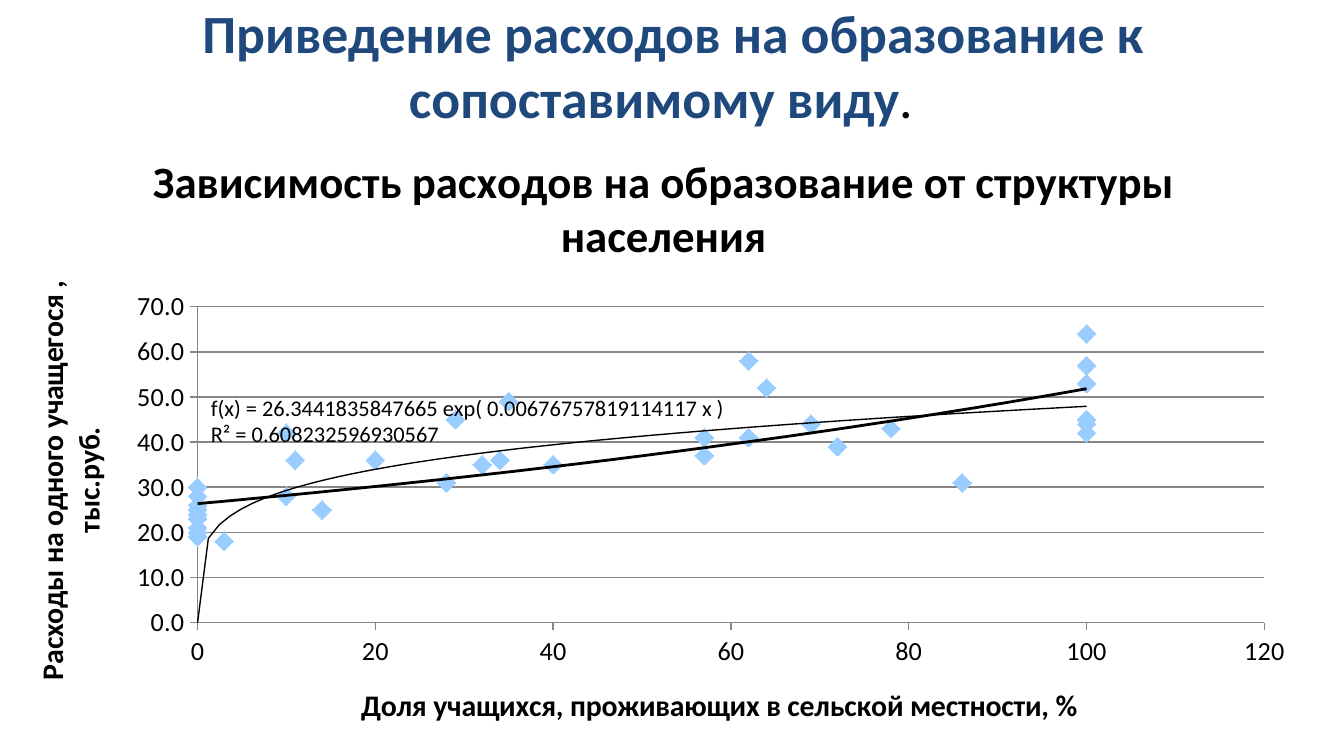
from dataclasses import dataclass

from lxml import etree
from pptx import Presentation
from pptx.chart.data import XyChartData
from pptx.dml.color import RGBColor
from pptx.enum.chart import XL_CHART_TYPE as ChartType
from pptx.enum.chart import XL_MARKER_STYLE as MarkerStyle
from pptx.enum.chart import XL_TICK_MARK as TickMark
from pptx.enum.text import MSO_ANCHOR as Anchor
from pptx.enum.text import PP_ALIGN as Align
from pptx.oxml import parse_xml
from pptx.oxml.ns import qn
from pptx.util import Inches, Pt


@dataclass(frozen=True)
class Theme:
    font: str = "Calibri"
    heading: str = "1F497D"
    text: str = "000000"
    marker: str = "99CCFF"
    grid: str = "868686"
    heading_size: float = 28.8
    chart_title_size: int = 24
    axis_title_size: int = 16
    tick_size: int = 14
    label_size: int = 12
    marker_size: int = 10


THEME = Theme()
CHART_NS = "http://schemas.openxmlformats.org/drawingml/2006/chart"
DRAWING_NS = "http://schemas.openxmlformats.org/drawingml/2006/main"

RURAL_SHARES = [
    100, 3, 57, 100, 10, 100, 0, 62, 57, 0, 100, 0, 86, 35, 64, 29, 72, 20, 32,
    100, 100, 0, 0, 10, 28, 0, 100, 0, 40, 0, 62, 11, 69, 0, 78, 34, 14,
]
SPENDINGS = [
    44, 18, 41, 57, 42, 42, 25, 41, 37, 30, 64, 19, 31, 49, 52, 45, 39, 36, 35,
    45, 45, 21, 24, 28, 31, 23, 53, 20, 35, 28, 58, 36, 44, 26, 43, 36, 25,
]


def color(value):
    return RGBColor.from_string(value)


def style_font(font, size, bold=False, shade=THEME.text):
    font.name = THEME.font
    font.size = Pt(size)
    font.bold = bold
    font.color.rgb = color(shade)


def add_heading(page, text, ending):
    box = page.shapes.add_textbox(Inches(0.51), Inches(0.01), Inches(9), Inches(0.94))
    frame = box.text_frame
    frame.word_wrap = True
    frame.vertical_anchor = Anchor.MIDDLE
    para = frame.paragraphs[0]
    para.alignment = Align.CENTER
    for words, bold, shade in ((text, True, THEME.heading), (ending, False, THEME.text)):
        span = para.add_run()
        span.text = words
        style_font(span.font, THEME.heading_size, bold, shade)


def make_layout(left, top, width=None, height=None):
    layout = etree.Element(qn("c:layout"))
    manual = etree.SubElement(layout, qn("c:manualLayout"))
    settings = [("xMode", "edge"), ("yMode", "edge"), ("x", left), ("y", top)]
    if width is not None:
        settings.insert(0, ("layoutTarget", "inner"))
        settings += [("w", width), ("h", height)]
    for name, value in settings:
        etree.SubElement(manual, qn(f"c:{name}")).set("val", str(value))
    return layout


def replace_layout(parent, layout, following):
    for old in parent.findall(qn("c:layout")):
        parent.remove(old)
    parent.find(qn(following)).addprevious(layout)


def set_title(title, text, size, left, top):
    para = title.text_frame.paragraphs[0]
    para.text = text
    style_font(para.font, size, True)
    replace_layout(title._element, make_layout(left, top), "c:overlay")


def style_axis(axis, maximum, step, number_format):
    axis.minimum_scale = 0
    axis.maximum_scale = maximum
    axis.major_unit = step
    axis.major_tick_mark = TickMark.OUTSIDE
    axis.minor_tick_mark = TickMark.NONE
    axis.tick_labels.number_format = number_format
    axis.tick_labels.number_format_is_linked = False
    style_font(axis.tick_labels.font, THEME.tick_size)
    axis.format.line.color.rgb = color(THEME.grid)


def add_trendline(series, kind, width, label_at=None):
    shown = int(label_at is not None)
    trendline = parse_xml(
        f'<c:trendline xmlns:c="{CHART_NS}" xmlns:a="{DRAWING_NS}">'
        f'<c:spPr><a:ln w="{Pt(width)}"><a:solidFill><a:srgbClr val="{THEME.text}"/>'
        f'</a:solidFill></a:ln></c:spPr><c:trendlineType val="{kind}"/>'
        f'<c:dispRSqr val="{shown}"/><c:dispEq val="{shown}"/></c:trendline>'
    )
    if label_at:
        label = etree.SubElement(trendline, qn("c:trendlineLbl"))
        label.append(make_layout(*label_at))
        etree.SubElement(label, qn("c:numFmt"), formatCode="General", sourceLinked="0")
        label.append(parse_xml(
            f'<c:txPr xmlns:c="{CHART_NS}" xmlns:a="{DRAWING_NS}"><a:bodyPr/><a:p><a:pPr>'
            f'<a:defRPr sz="{THEME.label_size * 100}"><a:solidFill>'
            f'<a:srgbClr val="{THEME.text}"/></a:solidFill>'
            f'<a:latin typeface="{THEME.font}"/></a:defRPr></a:pPr>'
            '<a:endParaRPr lang="ru-RU"/></a:p></c:txPr>'
        ))
    series._element.find(qn("c:xVal")).addprevious(trendline)


def add_spending_chart(page):
    data = XyChartData()
    points = data.add_series("Series 1")
    for share, spending in zip(RURAL_SHARES, SPENDINGS):
        points.add_data_point(share, spending)
    chart = page.shapes.add_chart(
        ChartType.XY_SCATTER, Inches(0), Inches(0.92), Inches(9.8), Inches(4.7), data
    ).chart
    chart.has_legend = False
    style_font(chart.font, THEME.label_size)
    chart.has_title = True
    set_title(chart.chart_title, "Зависимость расходов на образование от структуры населения",
              THEME.chart_title_size, 0.11, 0.03)

    shares, spendings = chart.category_axis, chart.value_axis
    style_axis(shares, 120, 20, "General")
    style_axis(spendings, 70, 10, "0.0")
    shares.has_major_gridlines = False
    spendings.has_major_gridlines = True
    spendings.major_gridlines.format.line.color.rgb = color(THEME.grid)
    set_title(shares.axis_title, "Доля учащихся, проживающих в сельской местности, %",
              THEME.axis_title_size, 0.27, 0.88)
    set_title(spendings.axis_title, "Расходы на одного учащегося , тыс.руб.",
              THEME.axis_title_size, 0.02, 0.24)

    plot = chart.plots[0]
    plot.vary_by_categories = False
    series = plot.series[0]
    series.format.line.fill.background()
    series.marker.style = MarkerStyle.DIAMOND
    series.marker.size = THEME.marker_size
    series.marker.format.fill.solid()
    series.marker.format.fill.fore_color.rgb = color(THEME.marker)
    series.marker.format.line.fill.background()
    add_trendline(series, "power", 0.75)
    add_trendline(series, "exp", 1.5, label_at=(0.16, 0.43))

    area = chart._chartSpace.chart.plotArea
    replace_layout(area, make_layout(0.15, 0.29, 0.81, 0.5), "c:scatterChart")


def main():
    deck = Presentation()
    deck.slide_width = Inches(10)
    deck.slide_height = deck.slide_width * 9 // 16
    page = deck.slides.add_slide(deck.slide_layouts[6])
    add_heading(page, "Приведение расходов на образование к сопоставимому виду", ".  ")
    add_spending_chart(page)
    deck.save("out.pptx")


if __name__ == "__main__":
    main()
